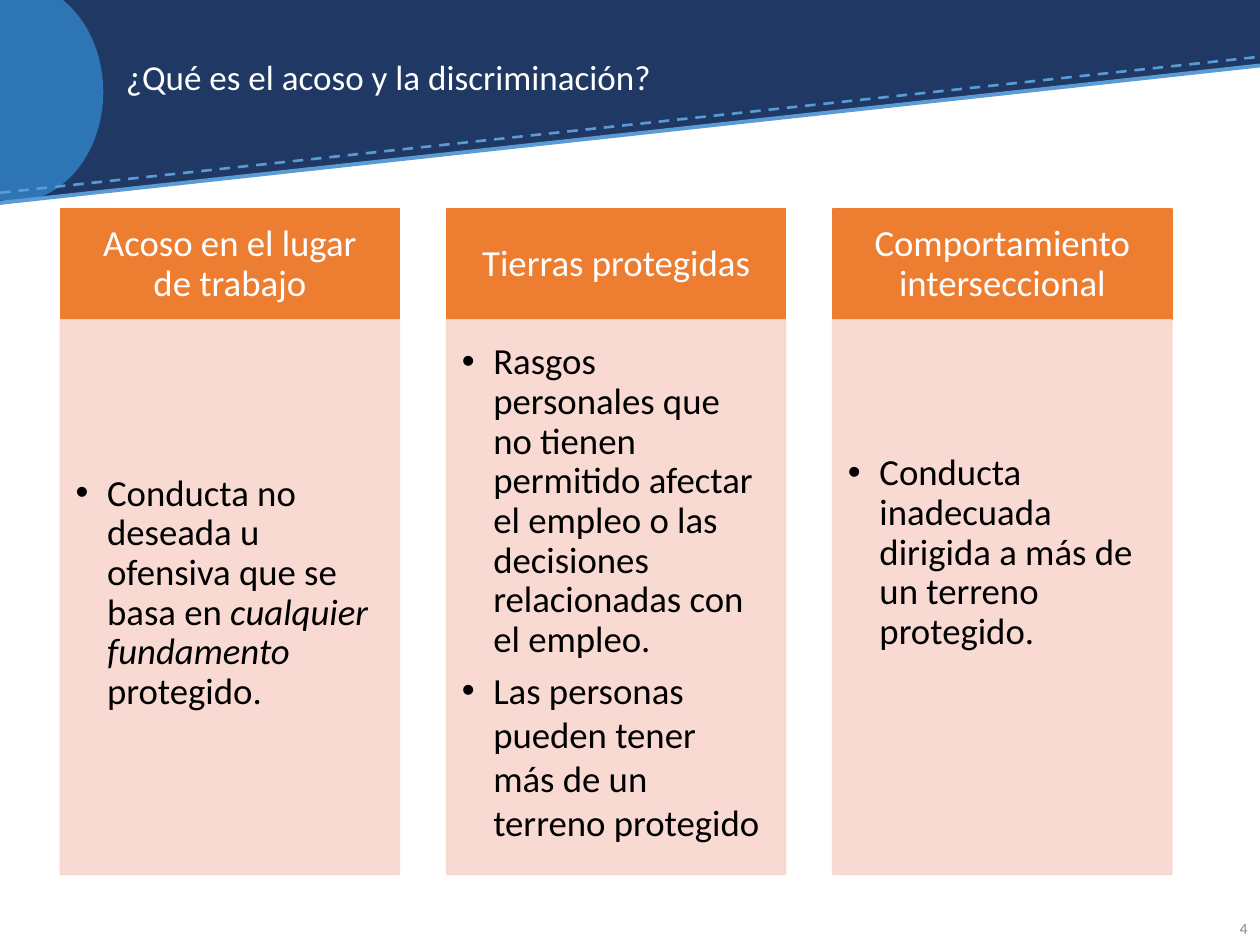
import dataclasses

import lxml.etree
import pptx
import pptx.dml.color
import pptx.enum.dml
import pptx.enum.shapes
import pptx.enum.text
import pptx.oxml.ns
import pptx.util

SHAPES = pptx.enum.shapes.MSO_SHAPE
ALIGN = pptx.enum.text.PP_ALIGN
ANCHOR = pptx.enum.text.MSO_ANCHOR
DASH = pptx.enum.dml.MSO_LINE.DASH


@dataclasses.dataclass(frozen=True)
class Theme:
    font: str = "Calibri"
    navy: str = "203864"
    blue: str = "2E75B6"
    sky: str = "5B9BD5"
    orange: str = "ED7D31"
    blush: str = "F8D7CE"
    white: str = "FFFFFF"
    black: str = "000000"
    gray: str = "8C8C8C"
    title_size: int = 20
    card_size: int = 21
    number_size: int = 9


THEME = Theme()


def color(value):
    return pptx.dml.color.RGBColor.from_string(value)


def add_element(parent, tag, **attributes):
    return lxml.etree.SubElement(parent, pptx.oxml.ns.qn(tag), attributes)


def write(frame, *paragraphs, size, fill, align=ALIGN.LEFT, insets=(0.1, 0.05, 0.1, 0.05),
          spacings=(0.9,), after=0, bullet=False):
    frame.word_wrap = True
    frame.vertical_anchor = ANCHOR.MIDDLE
    frame.margin_left, frame.margin_top, frame.margin_right, frame.margin_bottom = map(
        pptx.util.Inches, insets)
    for index, runs in enumerate(paragraphs):
        paragraph = frame.paragraphs[0] if index == 0 else frame.add_paragraph()
        if bullet:
            properties = paragraph._p.get_or_add_pPr()
            indent = pptx.util.Inches(0.25)
            properties.set("marL", str(int(indent)))
            properties.set("indent", str(-int(indent)))
            add_element(properties, "a:buFont", typeface="Arial")
            add_element(properties, "a:buChar", char="•")
        paragraph.alignment = align
        paragraph.line_spacing = spacings[index]
        paragraph.space_after = pptx.util.Pt(after)
        for text, italic in runs:
            run = paragraph.add_run()
            run.text = text
            run.font.name = THEME.font
            run.font.size = pptx.util.Pt(size)
            run.font.italic = italic
            run.font.color.rgb = color(fill)


class SlideBuilder:
    def __init__(self, presentation):
        self.width = presentation.slide_width
        self.height = presentation.slide_height
        self.slide = presentation.slides.add_slide(presentation.slide_layouts[6])

    def place(self, left, top, width, height):
        return [round(share * length / 100) for share, length in zip(
            (left, top, width, height), (self.width, self.height) * 2)]

    def shape(self, kind, box, fill, line=None, opacity=100, flip=False):
        shape = self.slide.shapes.add_shape(kind, *self.place(*box))
        shape.shadow.inherit = False
        shape.fill.solid()
        shape.fill.fore_color.rgb = color(fill)
        if line:
            shape.line.color.rgb = color(line)
            shape.line.width = pptx.util.Pt(1)
        else:
            shape.line.fill.background()
        if opacity < 100:
            for tint in shape._element.spPr.iter(pptx.oxml.ns.qn("a:srgbClr")):
                add_element(tint, "a:alpha", val=str(opacity * 1000))
        if flip:
            shape._element.spPr.xfrm.set("flipV", "1")
        return shape

    def line(self, start, end, width, dash=None):
        connector = self.slide.shapes.add_connector(
            pptx.enum.shapes.MSO_CONNECTOR.STRAIGHT, *self.place(*start, *end))
        connector.line.color.rgb = color(THEME.sky)
        connector.line.width = pptx.util.Pt(width)
        if dash:
            connector.line.dash_style = dash
        add_element(connector._element.spPr, "a:effectLst")

    def text(self, box, text, **style):
        textbox = self.slide.shapes.add_textbox(*self.place(*box))
        write(textbox.text_frame, [(text, False)], **style)

    def card(self, left, heading, paragraphs, bottom_inset):
        width, top, header, body = 26.9, 22.13, 11.73, 58.67
        head = self.shape(SHAPES.RECTANGLE, (left, top, width, header),
                          THEME.orange, THEME.orange)
        write(head.text_frame, [(heading, False)], size=THEME.card_size, fill=THEME.white,
              align=ALIGN.CENTER, insets=(0.16, 0.09, 0.16, 0.09))
        panel = self.shape(SHAPES.RECTANGLE, (left, top + header, width, body),
                           THEME.blush, THEME.blush, opacity=90)
        write(panel.text_frame, *paragraphs, size=THEME.card_size, fill=THEME.black,
              insets=(0.12, 0.12, 0.16, bottom_inset), spacings=(0.9, 1), after=4, bullet=True)


CARDS = [
    ("Acoso en el lugar de trabajo",
     [[("Conducta no deseada u ofensiva que se basa en ", False),
       ("cualquier fundamento ", True), ("protegido.", False)]], 0.18),
    ("Tierras protegidas",
     [[("Rasgos personales que no tienen permitido afectar el empleo o las decisiones "
        "relacionadas con el empleo.", False)],
      [("Las personas pueden tener más de un terreno protegido", False)]], 0.18),
    ("Comportamiento interseccional",
     [[("Conducta inadecuada dirigida a más de un terreno protegido.", False)]], 0.82),
]


def main():
    presentation = pptx.Presentation()
    presentation.slide_width = pptx.util.Inches(10)
    presentation.slide_height = pptx.util.Inches(7.5)
    builder = SlideBuilder(presentation)
    builder.shape(SHAPES.RECTANGLE, (0, 0, 100, 6.93), THEME.navy)
    builder.shape(SHAPES.RIGHT_TRIANGLE, (0, 6.8, 100, 14.53), THEME.navy, flip=True)
    builder.shape(SHAPES.OVAL, (-5.9, -1.87, 14.1, 23.2), THEME.blue)
    builder.line((0, 20.4), (100, 6), 1.5, DASH)
    builder.line((0, 21.47), (100, 6.93), 2.25)
    builder.text((9, 2.67, 80.5, 11.47), "¿Qué es el acoso y la discriminación?",
                 size=THEME.title_size, fill=THEME.white)
    builder.text((94.7, 95.6, 5.3, 5.33), "4", size=THEME.number_size, fill=THEME.gray,
                 align=ALIGN.RIGHT, spacings=(1,), after=6)
    for index, card in enumerate(CARDS):
        builder.card(4.8 + index * 30.65, *card)
    presentation.save("out.pptx")


if __name__ == "__main__":
    main()
